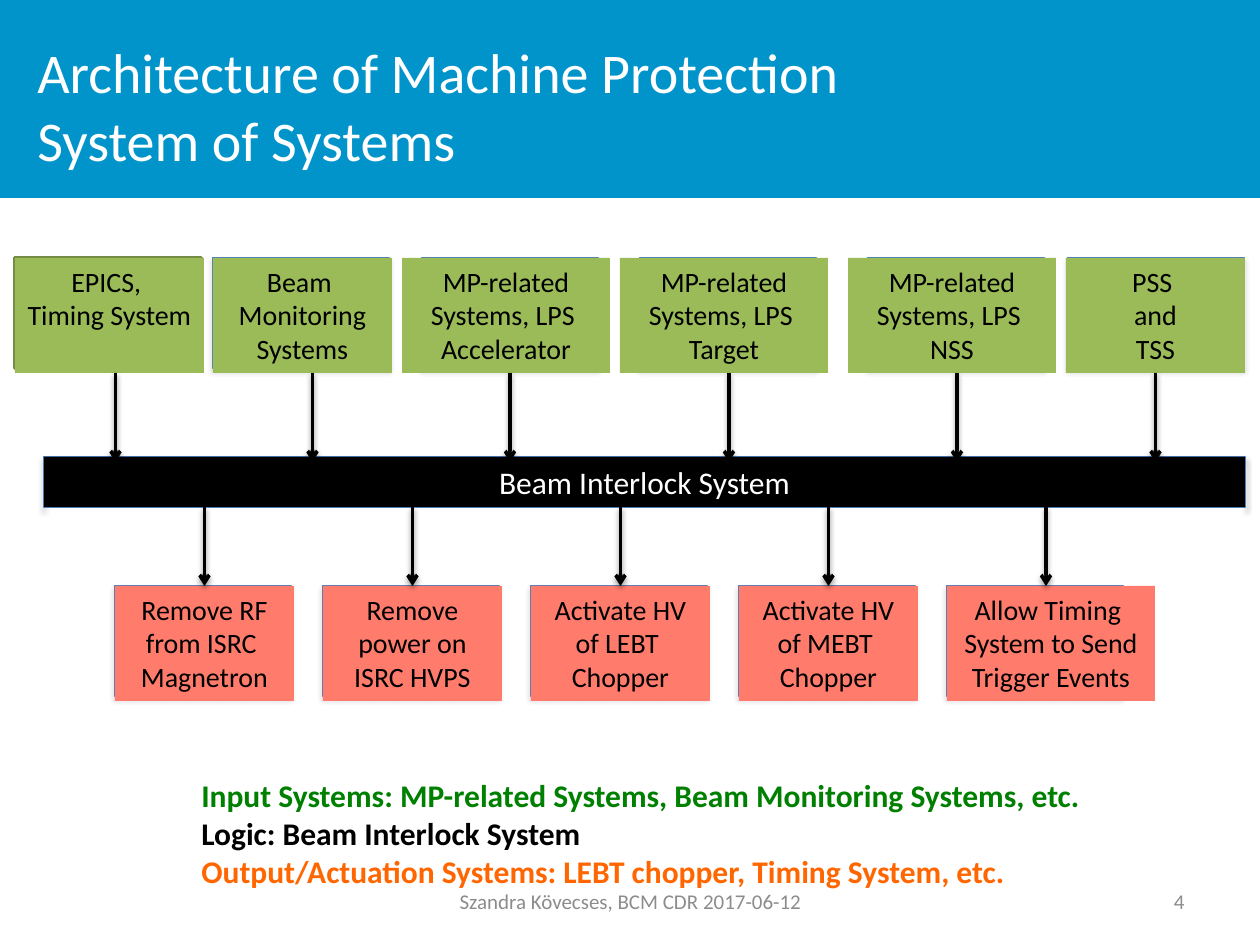
from dataclasses import dataclass

from lxml.etree import SubElement
from pptx import Presentation
from pptx.dml.color import RGBColor
from pptx.enum.shapes import MSO_CONNECTOR, MSO_SHAPE
from pptx.enum.text import MSO_ANCHOR, PP_ALIGN
from pptx.oxml.ns import qn
from pptx.util import Pt

EMU = 914400 / 126


@dataclass(frozen=True)
class Theme:
    font: str = "Calibri"
    head: str = "0094CA"
    input: str = "9BBB59"
    output: str = "FF7C6D"
    edge: str = "4B7EBC"
    rim: str = "738A42"
    black: str = "000000"
    white: str = "FFFFFF"
    green: str = "008000"
    orange: str = "FF6600"
    gray: str = "8C8C8C"
    title: int = 32
    large: int = 18
    label: int = 16
    small: int = 12


T = Theme()

TITLE = "Architecture of Machine Protection System of Systems"
LOGIC = "Beam Interlock System"
FOOTER = "Szandra Kövecses, BCM CDR 2017-06-12"
PAGE = "4"

# left, width, frame left, frame width, arrow offset, text
INPUTS = [
    (15, 189, 15, 186, 6, "EPICS, \nTiming System"),
    (213, 179, 213, 176, 10, "Beam \nMonitoring\nSystems"),
    (402, 208, 422, 176, 4, "MP-related Systems, LPS \nAccelerator"),
    (620, 208, 640, 176, 5, "MP-related Systems, LPS \nTarget"),
    (848, 208, 868, 176, 5, "MP-related Systems, LPS \nNSS"),
    (1066, 179, 1068, 176, 0, "PSS \nand\nTSS"),
]
OUTPUTS = [
    (179, 0, "Remove RF from ISRC \nMagnetron"),
    (179, 0, "Remove power on ISRC HVPS"),
    (179, 0, "Activate HV\nof LEBT \nChopper"),
    (179, 0, "Activate HV\nof MEBT \nChopper"),
    (208, -5, "Allow Timing \nSystem to Send\nTrigger Events"),
]
LEGEND = [
    ("Input Systems: MP-related Systems, Beam Monitoring Systems, etc.", T.green),
    ("Logic: Beam Interlock System", T.black),
    ("Output/Actuation Systems: LEBT chopper, Timing System, etc.", T.orange),
]
IN_TOP, OUT_TOP, OUT_LEFT, OUT_STEP = 258, 586, 115, 208
BOX_H, FRAME_H = 115, 110
BAR = (44, 457, 1201, 50)


def px(n):
    return round(n * EMU)


def rgb(code):
    return RGBColor.from_string(code)


def write(shape, text, size, color, align=PP_ALIGN.LEFT,
          anchor=MSO_ANCHOR.TOP, bold=False):
    frame = shape.text_frame
    frame.word_wrap = True
    frame.vertical_anchor = anchor
    frame.text = text
    for para in frame.paragraphs:
        para.alignment = align
        for run in para.runs:
            font = run.font
            font.name, font.size, font.bold = T.font, Pt(size), bold
            font.color.rgb = rgb(color)


def label(slide, area, *args, **style):
    box = slide.shapes.add_textbox(*map(px, area))
    write(box, *args, **style)
    return box


def block(slide, area, fill):
    shape = slide.shapes.add_shape(MSO_SHAPE.RECTANGLE, *map(px, area))
    shape.shadow.inherit = False
    shape.fill.solid()
    shape.fill.fore_color.rgb = rgb(fill)
    shape.line.fill.background()
    return shape


def shade(effects, alpha, dist):
    drop = SubElement(effects, qn("a:outerShdw"), blurRad="39370",
                      dist=str(dist), dir="5400000", rotWithShape="0")
    color = SubElement(drop, qn("a:srgbClr"), val=T.black)
    SubElement(color, qn("a:alpha"), val=str(alpha * 1000))


def outline(slide, area, color=T.edge, width=0.75, shadow=True):
    shape = slide.shapes.add_shape(MSO_SHAPE.FRAME, *map(px, area))
    shape.adjustments[0] = 0
    shape.shadow.inherit = False
    shape.fill.solid()
    shape.fill.fore_color.rgb = rgb(color)
    shape.line.color.rgb = rgb(color)
    shape.line.width = Pt(width)
    if shadow:
        shade(shape._element.spPr.find(qn("a:effectLst")), 35, 23000)


def arrow(slide, x, top, bottom):
    line = slide.shapes.add_connector(MSO_CONNECTOR.STRAIGHT, x, top, x, bottom)
    line.line.color.rgb = rgb(T.black)
    line.line.width = Pt(2)
    SubElement(line.line._get_or_add_ln(), qn("a:tailEnd"), type="arrow")
    shade(SubElement(line._element.spPr, qn("a:effectLst")), 38, 20000)
    return line


def system(slide, left, top, width, fill, text):
    box = block(slide, (left, top, width, BOX_H), fill)
    write(box, text, T.label, T.black, PP_ALIGN.CENTER)
    return box


def middle(box, shift):
    return box.left + box.width // 2 + px(shift)


def main():
    deck = Presentation()
    deck.slide_width, deck.slide_height = px(1260), px(945)
    slide = deck.slides.add_slide(deck.slide_layouts[6])

    block(slide, (0, 0, 1260, 198), T.head)
    label(slide, (25, 26, 984, 158), TITLE, T.title, T.white,
          anchor=MSO_ANCHOR.MIDDLE)

    outline(slide, BAR)
    bar = block(slide, BAR, T.black)
    write(bar, LOGIC, T.large, T.white, PP_ALIGN.CENTER)

    for i, (left, width, inner, span, shift, text) in enumerate(INPUTS):
        style = (T.rim, 2, False) if i == 0 else ()
        outline(slide, (inner, IN_TOP, span, FRAME_H), *style)
        box = system(slide, left, IN_TOP, width, T.input, text)
        line = arrow(slide, middle(box, shift), box.top + box.height, px(462))
        if not shift:
            line.begin_connect(box, 2)

    for i, (width, shift, text) in enumerate(OUTPUTS):
        left = OUT_LEFT + i * OUT_STEP
        outline(slide, (left, OUT_TOP, 176, FRAME_H))
        box = system(slide, left, OUT_TOP, width, T.output, text)
        line = arrow(slide, middle(box, shift), bar.top + bar.height, box.top)
        if not shift:
            line.end_connect(box, 0)

    legend = label(slide, (189, 770, 917, 127),
                   "\n".join(text for text, _ in LEGEND),
                   T.large, T.black, bold=True)
    for para, (_, color) in zip(legend.text_frame.paragraphs, LEGEND):
        para.runs[0].font.color.rgb = rgb(color)

    label(slide, (431, 876, 399, 50), FOOTER, T.small, T.gray,
          PP_ALIGN.CENTER, MSO_ANCHOR.MIDDLE)
    label(slide, (903, 876, 294, 50), PAGE, T.small, T.gray,
          PP_ALIGN.RIGHT, MSO_ANCHOR.MIDDLE)
    deck.save("out.pptx")


if __name__ == "__main__":
    main()
